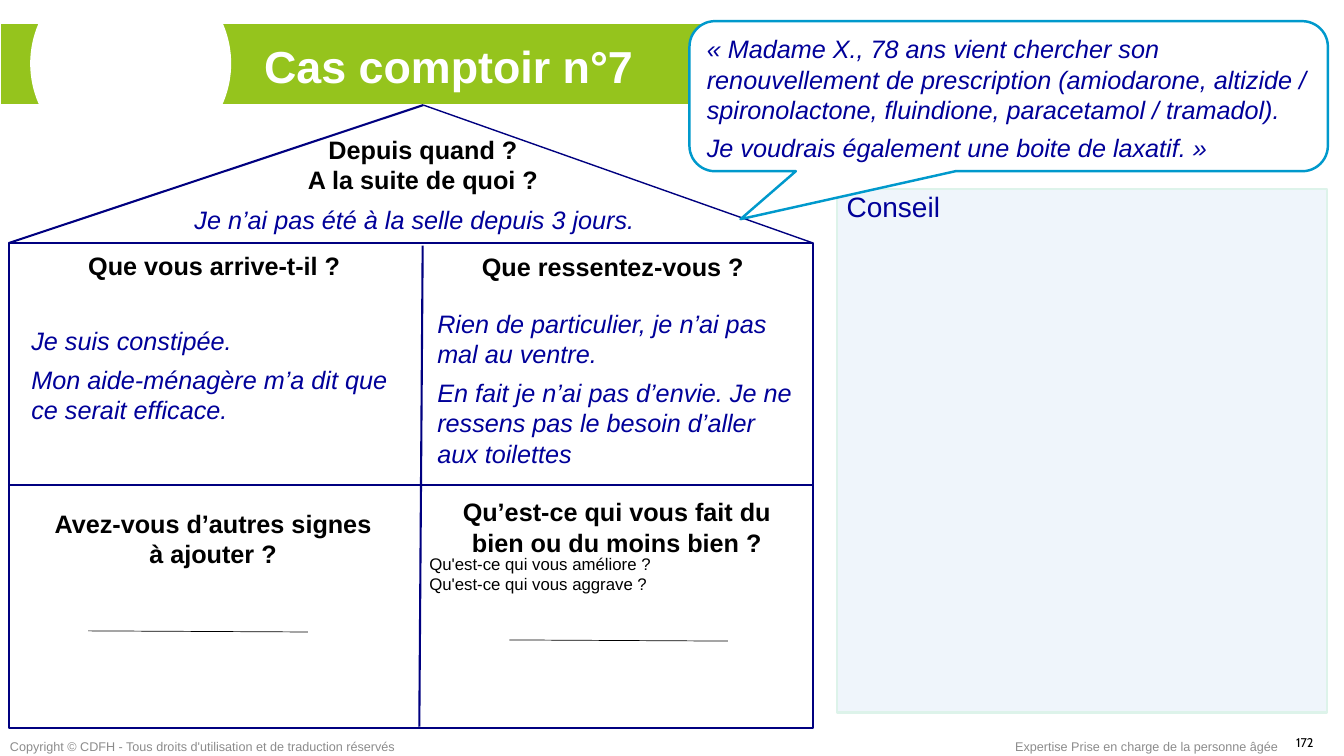
from dataclasses import dataclass

from lxml.etree import SubElement
from pptx import Presentation
from pptx.dml.color import RGBColor
from pptx.enum.shapes import MSO_CONNECTOR, MSO_SHAPE
from pptx.enum.text import MSO_ANCHOR, MSO_AUTO_SIZE, PP_ALIGN
from pptx.oxml.ns import qn
from pptx.util import Inches, Pt

BLACK = RGBColor(0x00, 0x00, 0x00)
WHITE = RGBColor(0xFF, 0xFF, 0xFF)
GREEN = RGBColor(0x95, 0xC4, 0x1D)
GREY = RGBColor(0x8C, 0x8C, 0x8C)
NAVY = RGBColor(0x00, 0x00, 0x80)
INK = RGBColor(0x00, 0x00, 0x99)
CYAN = RGBColor(0x00, 0x99, 0xCC)
PALE_BLUE = RGBColor(0xEF, 0xF5, 0xFB)
PALE_GREEN = RGBColor(0xDD, 0xF3, 0xEA)

WIDTH, HEIGHT = Inches(13.33), Inches(7.5)

# Outline of the house, in percent of the slide
LEFT, APEX, RIGHT = 0.65, 31.5, 60.5
TOP, EAVES, FLOOR = 13.9, 32.15, 96.25


@dataclass(frozen=True)
class Box:
    """Place and size in percent of the slide's width and height."""
    x: float
    y: float
    w: float
    h: float

    def lengths(self):
        return across(self.x), down(self.y), across(self.w), down(self.h)


@dataclass(frozen=True)
class Label:
    box: Box
    lines: tuple[str, ...]


@dataclass(frozen=True)
class Stroke:
    x1: float
    y1: float
    x2: float
    y2: float
    color: RGBColor
    width: float


QUESTIONS = (
    Label(Box(21.3, 17.05, 20.35, 8.9), ("Depuis quand ?", "A la suite de quoi ?")),
    Label(Box(0.45, 32.4, 31, 5.3), ("Que vous arrive-t-il ?",)),
    Label(Box(31.75, 32.55, 27.7, 5.3), ("Que ressentez-vous ?",)),
    Label(Box(31.95, 65.05, 27.9, 9.5),
          ("Qu’est-ce qui vous fait du bien ou du moins bien\u00a0?",)),
    Label(Box(1.6, 66.55, 28.5, 8.9),
          ("Avez-vous d’autres signes", "à ajouter\u00a0?")),
)
ANSWERS = (
    Label(Box(31.8, 40.15, 27.9, 22.7),
          ("Rien de particulier, je n’ai pas mal au ventre.",
           "En fait je n’ai pas d’envie. Je ne ressens pas le besoin d’aller aux toilettes")),
    Label(Box(1.6, 42.4, 28.95, 14.5),
          ("Je suis constipée.",
           "Mon aide-ménagère m’a dit que ce serait efficace.")),
    Label(Box(13.73, 26.4, 35.7, 5.3),
          ("Je n’ai pas été à la selle depuis 3 jours.",)),
)
HINT = Label(Box(31.2, 72.55, 26.2, 6.7),
             ("Qu'est-ce qui vous améliore ?", "Qu'est-ce qui vous aggrave ?"))
REQUEST = (
    "«\u00a0Madame X., 78 ans vient chercher son renouvellement de prescription "
    "(amiodarone, altizide / spironolactone, fluindione, paracetamol / tramadol).",
    "Je voudrais également une boite de laxatif.\u00a0»",
)
STROKES = (
    Stroke(LEFT, EAVES, APEX, TOP, NAVY, 1.5),
    Stroke(APEX, TOP, RIGHT, EAVES, NAVY, 1),
    Stroke(LEFT, EAVES, RIGHT, EAVES, NAVY, 1),
    Stroke(31.45, 32.5, 31.2, 96.1, NAVY, 1.5),
)
BLANKS = (
    Stroke(37.9, 84.65, 54.15, 84.8, BLACK, 0.5),
    Stroke(6.55, 83.45, 22.9, 83.6, BLACK, 0.5),
)


def across(share: float) -> int:
    return round(WIDTH * share / 100)


def down(share: float) -> int:
    return round(HEIGHT * share / 100)


def write(tf, *lines: str, size: float = 18, color: RGBColor = BLACK,
          bold: bool = False, italic: bool = False, font: str = "Arial",
          align=PP_ALIGN.LEFT, gap: float = 0, spacing: float = 1.0,
          wrap: bool = True) -> None:
    """Fill a text frame, one paragraph a line, with gap points between them."""
    tf.word_wrap = wrap
    tf.auto_size = MSO_AUTO_SIZE.NONE
    tf.vertical_anchor = MSO_ANCHOR.TOP
    for i, line in enumerate(lines):
        p = tf.add_paragraph() if i else tf.paragraphs[0]
        p.alignment = align
        p.line_spacing = spacing
        p.space_before = Pt(gap if i else 0)
        r = p.add_run()
        r.text = line
        r.font.name, r.font.size = font, Pt(size)
        r.font.bold, r.font.italic = bold, italic
        r.font.color.rgb = color


def add_text(slide, label: Label, **style) -> None:
    sp = slide.shapes.add_textbox(*label.box.lengths())
    write(sp.text_frame, *label.lines, **style)


def add_block(slide, kind, box: Box, fill: RGBColor | None, line: RGBColor,
              width: float):
    sp = slide.shapes.add_shape(kind, *box.lengths())
    sp.shadow.inherit = False
    if fill is None:
        sp.fill.background()
    else:
        sp.fill.solid()
        sp.fill.fore_color.rgb = fill
    sp.line.color.rgb = line
    sp.line.width = Pt(width)
    return sp


def add_stroke(slide, stroke: Stroke):
    line = slide.shapes.add_connector(
        MSO_CONNECTOR.STRAIGHT, across(stroke.x1), down(stroke.y1),
        across(stroke.x2), down(stroke.y2))
    line.line.color.rgb = stroke.color
    line.line.width = Pt(stroke.width)
    SubElement(line._element.spPr, qn("a:effectLst"))
    return line


def add_frame(slide) -> None:
    """Banner, footer and page number."""
    add_block(slide, MSO_SHAPE.RECTANGLE, Box(0, 3.1, 96.85, 10.75), GREEN, WHITE, 1)
    add_block(slide, MSO_SHAPE.OVAL, Box(2.3, -4.8, 14.85, 26.4), WHITE, WHITE, 1)
    add_text(slide, Label(Box(95.7, 96.5, 4.3, 3.3), ("172",)), size=9, font="Cabin")
    add_text(slide, Label(Box(0, 97.05, 50, 2.95), (
        "Copyright © CDFH - Tous droits d'utilisation et de traduction réservés",)),
        size=9, color=GREY)
    add_text(slide, Label(Box(74.8, 97.05, 21.2, 2.95), (
        "Expertise Prise en charge de la personne âgée",)),
        size=9, color=GREY, wrap=False)


def add_title(slide) -> None:
    title = slide.shapes.title
    title.left, title.top, title.width, title.height = Box(18.9, 5.3, 74.6, 8.3).lengths()
    write(title.text_frame, "Cas comptoir n°7", size=32, color=WHITE, bold=True,
          spacing=0.9)
    slide.shapes._spTree.append(title._element)  # bring in front of the banner


def add_house(slide) -> None:
    walls = add_block(slide, MSO_SHAPE.RECTANGLE,
                      Box(LEFT, EAVES, RIGHT - LEFT, FLOOR - EAVES), None, NAVY, 1.5)
    middle = (EAVES + FLOOR) / 2
    floor = add_stroke(slide, Stroke(LEFT, middle, RIGHT, middle, NAVY, 1.5))
    floor.begin_connect(walls, 1)
    floor.end_connect(walls, 3)
    for stroke in STROKES:
        add_stroke(slide, stroke)


def main() -> None:
    prs = Presentation()
    prs.slide_width, prs.slide_height = WIDTH, HEIGHT
    slide = prs.slides.add_slide(prs.slide_layouts[5])
    add_frame(slide)
    advice = add_block(slide, MSO_SHAPE.RECTANGLE, Box(62.25, 24.95, 36.5, 69.3),
                       PALE_BLUE, PALE_GREEN, 1.5)
    write(advice.text_frame, "Conseil", size=20, color=INK, spacing=0.9)
    add_title(slide)
    add_house(slide)
    for question in QUESTIONS:
        add_text(slide, question, bold=True, align=PP_ALIGN.CENTER)
    for answer in ANSWERS:
        add_text(slide, answer, color=INK, italic=True, gap=6)
    add_text(slide, HINT, size=12)
    bubble = add_block(slide, MSO_SHAPE.ROUNDED_RECTANGULAR_CALLOUT,
                       Box(51.3, 2.8, 47.5, 19.85), WHITE, CYAN, 1.75)
    for i, value in enumerate((-0.42, 0.82, 0.17)):
        bubble.adjustments[i] = value
    write(bubble.text_frame, *REQUEST, color=INK, italic=True, gap=6)
    for blank in BLANKS:
        add_stroke(slide, blank)
    prs.save("out.pptx")


if __name__ == "__main__":
    main()
